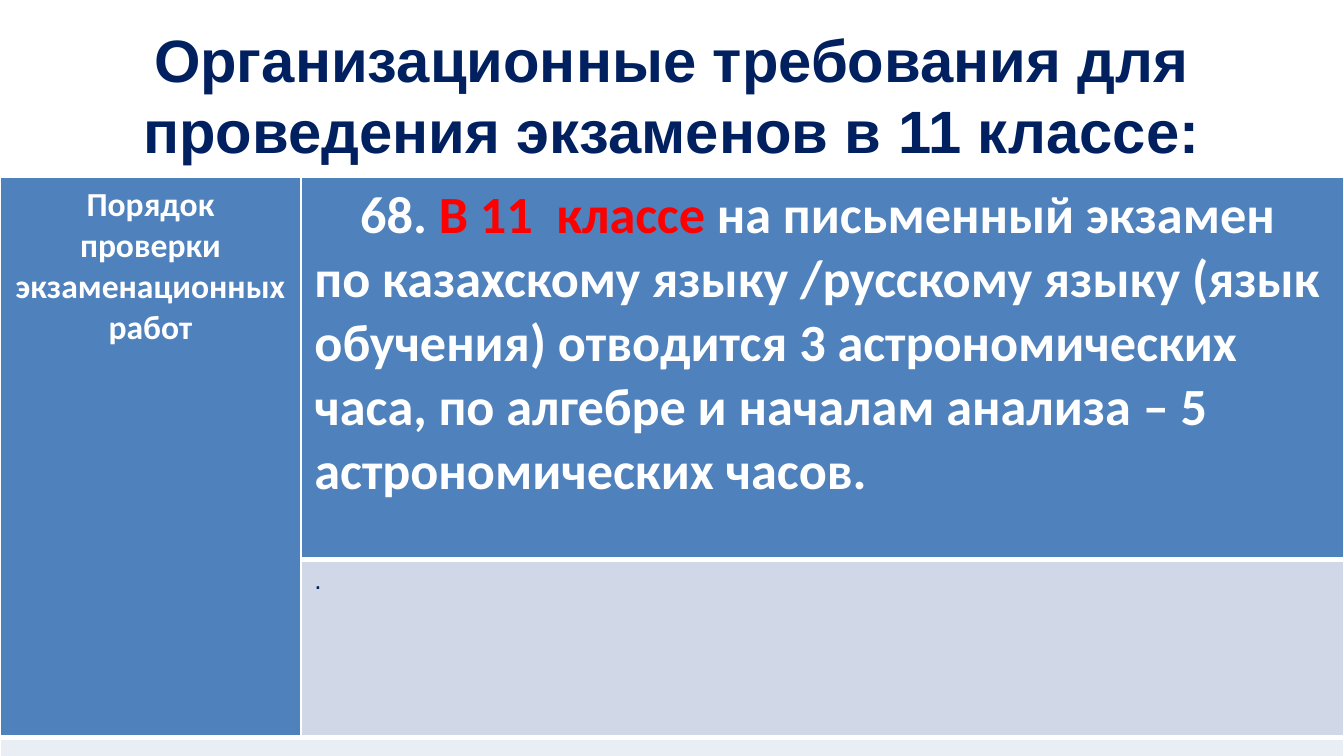
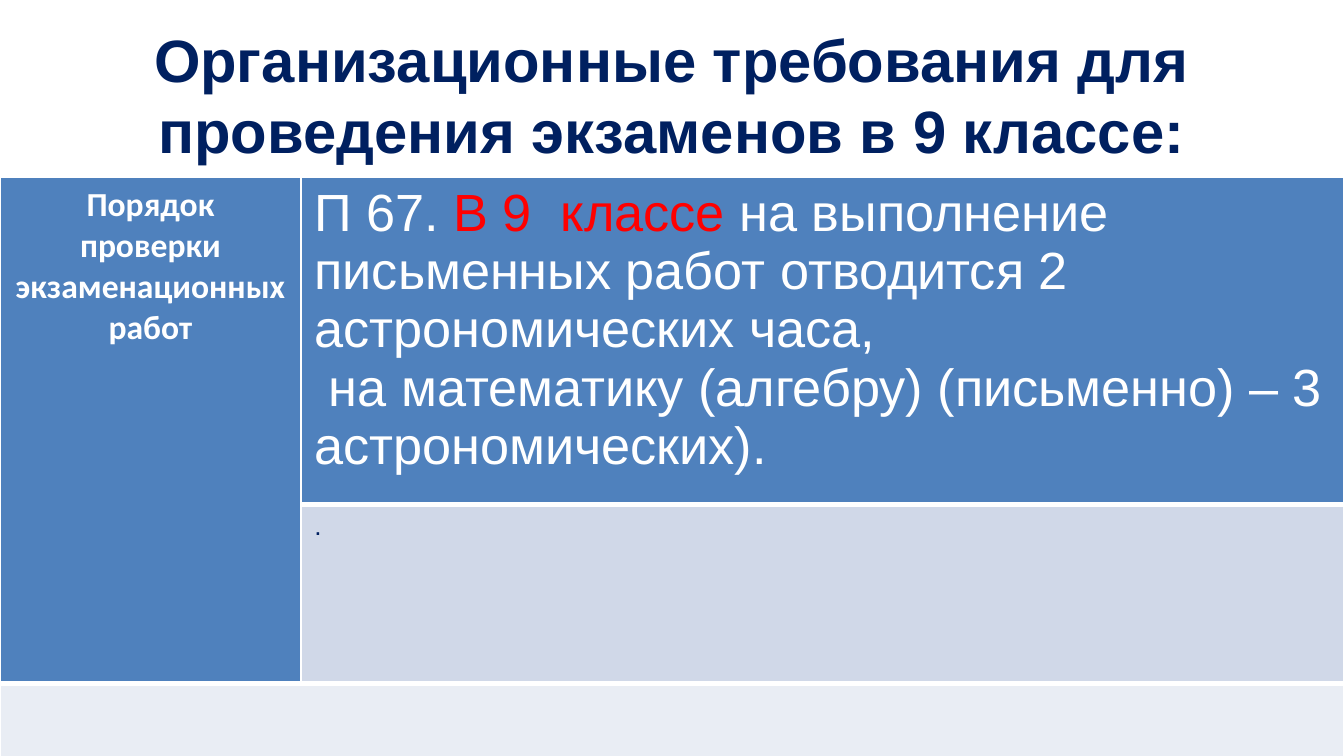
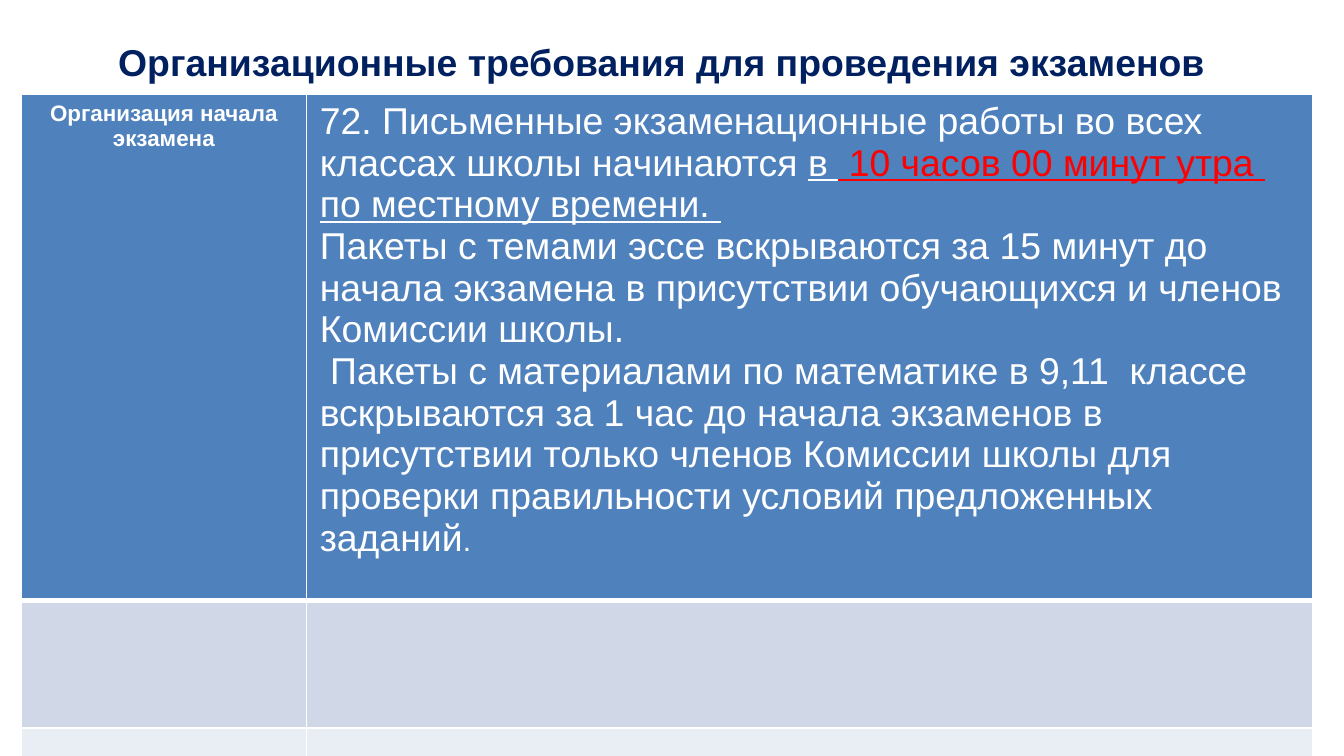
import dataclasses

import lxml.etree
import pptx
import pptx.dml.color
import pptx.enum.text
import pptx.oxml.ns
import pptx.util

Inches = pptx.util.Inches
Pt = pptx.util.Pt
ALIGN = pptx.enum.text.PP_ALIGN


@dataclasses.dataclass(frozen=True)
class Theme:
    navy: str = "002060"
    white: str = "FFFFFF"
    red: str = "FF0000"
    header: str = "4F81BD"
    band: str = "D0D8E8"
    pale_band: str = "E9EDF4"
    heading: str = "Arial"
    body: str = "Calibri"
    title_size: int = 32
    rule_size: int = 28
    small_title_size: int = 20
    label_size: int = 18
    stop_size: int = 16
    mark_size: int = 14
    small_label_size: int = 12
    thin_line: int = 1
    thick_line: int = 3


THEME = Theme()


@dataclasses.dataclass(frozen=True)
class Style:
    font: str
    size: int
    color: str = THEME.white
    bold: bool = False
    align: ALIGN = ALIGN.LEFT
    indent: float = 0


@dataclasses.dataclass(frozen=True)
class Piece:
    text: str
    color: str = ""
    size: int = 0
    underline: bool = False


TITLE = Style(THEME.heading, THEME.title_size, THEME.navy, True, ALIGN.CENTER)
SMALL_TITLE = dataclasses.replace(TITLE, size=THEME.small_title_size)
LABEL = Style(THEME.body, THEME.label_size, bold=True, align=ALIGN.CENTER)
SMALL_LABEL = Style(THEME.heading, THEME.small_label_size, bold=True, align=ALIGN.CENTER)
RULE = Style(THEME.heading, THEME.rule_size)
BOLD_RULE = Style(THEME.body, THEME.rule_size, bold=True, indent=0.34)
START_RULE = Style(THEME.heading, THEME.small_title_size)
MARK = Style(THEME.heading, THEME.mark_size, THEME.navy)


def rgb(color):
    return pptx.dml.color.RGBColor.from_string(color)


def write_text(text_frame, paragraphs, style):
    for index, pieces in enumerate(paragraphs):
        paragraph = text_frame.paragraphs[0] if index == 0 else text_frame.add_paragraph()
        paragraph.alignment = style.align
        if style.indent:
            properties = paragraph._p.get_or_add_pPr()
            properties.set("marL", "0")
            properties.set("indent", str(Inches(style.indent)))
        font = paragraph.font
        font.name, font.size, font.bold = style.font, Pt(style.size), style.bold
        mixed = any(piece.color for piece in pieces)
        if not mixed:
            font.color.rgb = rgb(style.color)
        for piece in pieces:
            run = paragraph.add_run()
            run.text = piece.text
            if mixed:
                run.font.color.rgb = rgb(piece.color or style.color)
            if piece.size:
                run.font.size = Pt(piece.size)
            if piece.underline:
                run.font.underline = True


def paint_cell(cell, color, bottom_width):
    properties = cell._tc.get_or_add_tcPr()
    widths = {"lnL": THEME.thin_line, "lnR": THEME.thin_line, "lnT": THEME.thin_line, "lnB": bottom_width}
    for side, width in widths.items():
        line = lxml.etree.SubElement(properties, pptx.oxml.ns.qn(f"a:{side}"), w=str(Pt(width)))
        fill = lxml.etree.SubElement(line, pptx.oxml.ns.qn("a:solidFill"))
        lxml.etree.SubElement(fill, pptx.oxml.ns.qn("a:srgbClr"), val=THEME.white)
    cell.fill.solid()
    cell.fill.fore_color.rgb = rgb(color)


def add_title(slide, box, text, style):
    shape = slide.shapes.add_textbox(*map(Inches, box))
    shape.text_frame.word_wrap = True
    shape.text_frame.vertical_anchor = pptx.enum.text.MSO_ANCHOR.MIDDLE
    write_text(shape.text_frame, [[Piece(text)]], style)


def add_banded_table(slide, left, top, columns, rows, label_rows=1):
    box = (left, top, sum(columns), sum(rows))
    table = slide.shapes.add_table(len(rows), len(columns), *map(Inches, box)).table
    table.first_row = table.horz_banding = False
    for column, width in zip(table.columns, columns):
        column.width = Inches(width)
    for row, height in zip(table.rows, rows):
        row.height = Inches(height)
    for row_index, color in enumerate((THEME.header, THEME.band, THEME.pale_band)):
        for column_index in range(len(columns)):
            header_rows = label_rows if column_index == 0 else 1
            cell = table.cell(row_index, column_index)
            if row_index < header_rows:
                paint_cell(cell, THEME.header, THEME.thick_line)
            else:
                paint_cell(cell, color, THEME.thin_line)
    return table


def build_duration_slide(slide, grade, header_height, rule, rule_style):
    title = f"Организационные требования для проведения экзаменов в {grade} классе:"
    add_title(slide, (0.5, 0.23, 9, 0.94), title, TITLE)
    table = add_banded_table(slide, 0, 1.32, (2.24, 7.76), (header_height, 1.33, 0.84), label_rows=2)
    table.cell(0, 0).merge(table.cell(1, 0))
    table.cell(2, 0).merge(table.cell(2, 1))
    write_text(table.cell(0, 0).text_frame, [[Piece("Порядок проверки экзаменационных работ")]], LABEL)
    write_text(table.cell(0, 1).text_frame, rule, rule_style)
    write_text(table.cell(1, 1).text_frame, [[Piece(".")]], MARK)


def build_start_slide(slide):
    add_title(slide, (0.35, 0.23, 9.15, 0.46), "Организационные требования для проведения экзаменов", SMALL_TITLE)
    table = add_banded_table(slide, 0.16, 0.7, (2.12, 7.49), (3.67, 0.95, 0.4))
    write_text(table.cell(0, 0).text_frame, [[Piece("Организация начала экзамена")]], SMALL_LABEL)
    rule = [
        [
            Piece("72. Письменные экзаменационные работы во всех классах школы начинаются "),
            Piece("в ", underline=True),
            Piece(" 10 часов 00 минут утра  ", THEME.red, underline=True),
            Piece("по местному времени. ", underline=True),
        ],
        [Piece("Пакеты с темами эссе вскрываются за 15 минут до начала экзамена "
               "в присутствии обучающихся и членов Комиссии школы.")],
        [
            Piece(" Пакеты с материалами по математике в 9,11  классе  вскрываются за 1 час "
                  "до начала экзаменов в присутствии только членов Комиссии школы "
                  "для проверки правильности условий предложенных заданий"),
            Piece(".", size=THEME.stop_size),
        ],
    ]
    write_text(table.cell(0, 1).text_frame, rule, START_RULE)


def main():
    presentation = pptx.Presentation()
    presentation.slide_width = Inches(10)
    presentation.slide_height = presentation.slide_width * 9 // 16
    blank = presentation.slide_layouts[6]
    grade_11_rule = [[
        Piece("68. "),
        Piece("В 11  классе ", THEME.red),
        Piece("на письменный экзамен по казахскому языку /русскому языку (язык обучения) "
              "отводится 3 астрономических часа, по алгебре и началам анализа – "
              "5 астрономических часов."),
    ]]
    grade_9_rule = [
        [
            Piece("П 67. "),
            Piece("В 9  классе ", THEME.red),
            Piece("на выполнение письменных работ отводится 2 астрономических часа,"),
        ],
        [Piece(" на математику (алгебру) (письменно) – 3 астрономических).")],
    ]
    build_duration_slide(presentation.slides.add_slide(blank), 11, 2.84, grade_11_rule, BOLD_RULE)
    build_duration_slide(presentation.slides.add_slide(blank), 9, 2.41, grade_9_rule, RULE)
    build_start_slide(presentation.slides.add_slide(blank))
    presentation.save("out.pptx")


if __name__ == "__main__":
    main()
